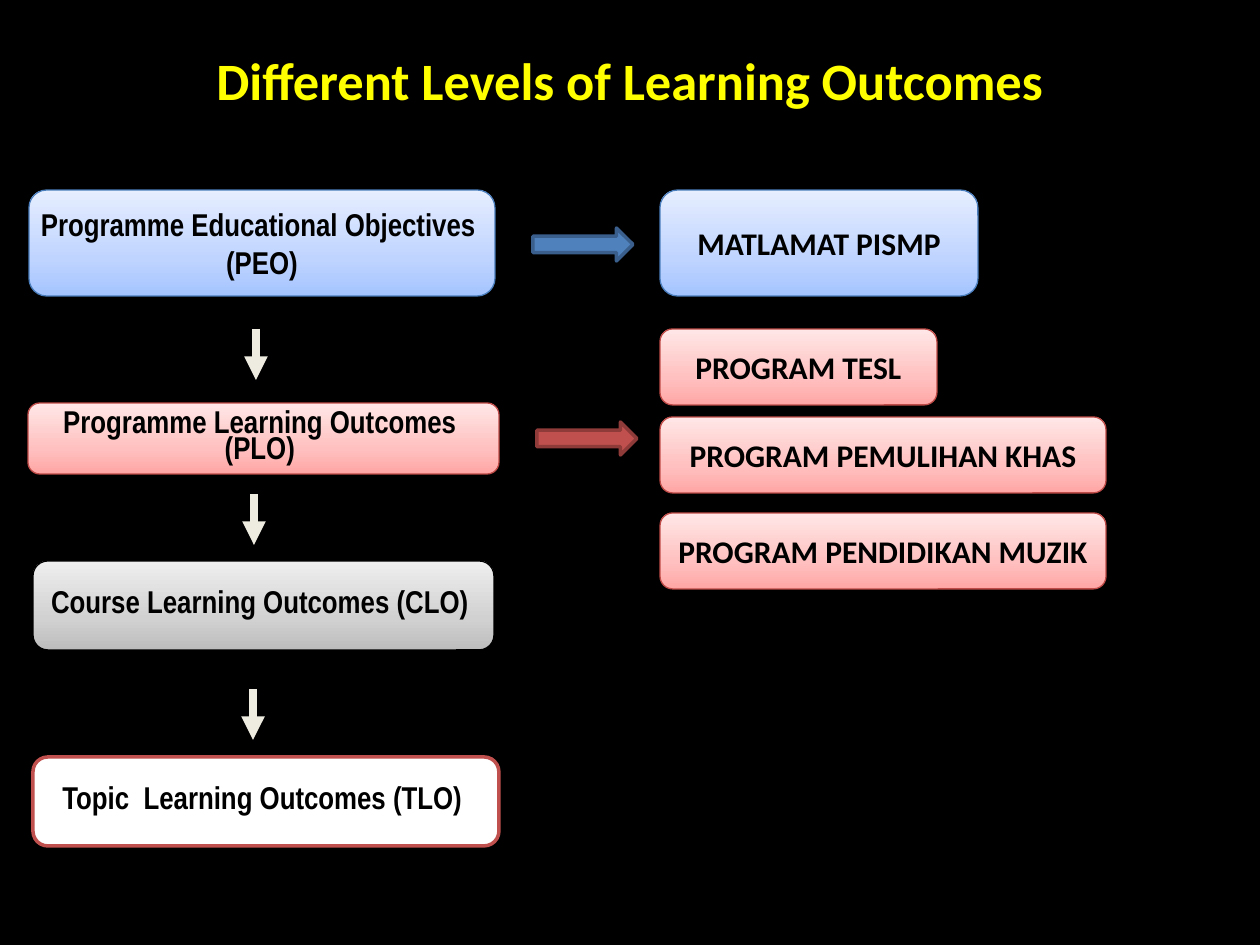
from dataclasses import dataclass

from lxml import etree
from pptx import Presentation
from pptx.dml.color import RGBColor
from pptx.enum.shapes import MSO_CONNECTOR, MSO_SHAPE
from pptx.enum.text import MSO_ANCHOR, PP_ALIGN
from pptx.oxml.ns import qn
from pptx.util import Emu, Pt

SLIDE_SIZE = (1260, 945)
PX_PER_INCH = 126


@dataclass(frozen=True)
class BoxStyle:
    fill: tuple  # one colour, or gradient colours from bottom to top
    line: str
    line_width: float = 0.75


class Theme:
    background = "000000"
    title = "FFFF00"
    text = "000000"
    step = "EEECE1"
    shadow = "000000"
    level_font = "Arial Narrow"
    font = "Calibri"
    title_size = 30
    box_size = 18
    step_width = 4.5
    stops = (0, 35, 100)
    blue = BoxStyle(("A4C4FF", "BFD4FF", "E6EEFF"), "4B7EBC")
    red = BoxStyle(("FFA6A5", "FFC0BF", "FFE7E7"), "BF4C48")
    grey = BoxStyle(("BDBDBD", "D1D1D1", "EEEEEE"), "000000")
    white = BoxStyle(("FFFFFF",), "C0504D", 2)
    blue_arrow = BoxStyle(("4F81BD",), "3A5F8C", 2)
    red_arrow = BoxStyle(("C0504D",), "8E3B39", 2)


def px(*lengths):
    return [Emu(round(length * 914400 / PX_PER_INCH)) for length in lengths]


def add_child(parent, tag, **attributes):
    child = etree.SubElement(parent, qn(tag))
    for name, value in attributes.items():
        child.set(name, str(value))
    return child


def set_gradient(fill, colours):
    fill.gradient()
    fill.gradient_angle = 90
    stop_list = fill._fill._gradFill.find(qn("a:gsLst"))
    for old_stop in list(stop_list):
        stop_list.remove(old_stop)
    for position, colour in zip(Theme.stops, colours):
        stop = add_child(stop_list, "a:gs", pos=position * 1000)
        add_child(stop, "a:srgbClr", val=colour)


def add_drop_shadow(shape):
    effects = shape._element.spPr.find(qn("a:effectLst"))
    shadow = add_child(effects, "a:outerShdw", blurRad=Pt(3.1), dist=Pt(1.6),
                       dir=90 * 60000, rotWithShape=0)
    colour = add_child(shadow, "a:srgbClr", val=Theme.shadow)
    add_child(colour, "a:alpha", val=38000)


def add_styled_shape(slide, preset, bounds, style):
    shape = slide.shapes.add_shape(preset, *px(*bounds))
    shape.line.color.rgb = RGBColor.from_string(style.line)
    shape.line.width = Pt(style.line_width)
    shape.shadow.inherit = False
    if len(style.fill) > 1:
        set_gradient(shape.fill, style.fill)
        add_drop_shadow(shape)
    else:
        shape.fill.solid()
        shape.fill.fore_color.rgb = RGBColor.from_string(style.fill[0])
    return shape


def write_lines(frame, lines, font, size, colour, spacing=None):
    for index, line in enumerate(lines):
        paragraph = frame.add_paragraph() if index else frame.paragraphs[0]
        paragraph.text = line
        paragraph.alignment = PP_ALIGN.CENTER
        paragraph.line_spacing = spacing
        paragraph.font.name = font
        paragraph.font.size = Pt(size)
        paragraph.font.bold = True
        paragraph.font.color.rgb = RGBColor.from_string(colour)


def add_box(slide, bounds, style, lines, font=Theme.font, spacing=None, wrap=True):
    box = add_styled_shape(slide, MSO_SHAPE.ROUNDED_RECTANGLE, bounds, style)
    frame = box.text_frame
    frame.word_wrap = wrap
    frame.vertical_anchor = MSO_ANCHOR.MIDDLE
    write_lines(frame, lines, font, Theme.box_size, Theme.text, spacing)


def add_step_arrow(slide, x, top, length=51):
    arrow = slide.shapes.add_connector(MSO_CONNECTOR.STRAIGHT, *px(x, top, x, top + length))
    arrow.line.color.rgb = RGBColor.from_string(Theme.step)
    arrow.line.width = Pt(Theme.step_width)
    add_child(arrow.line._get_or_add_ln(), "a:tailEnd", type="triangle")
    add_child(arrow._element.spPr, "a:effectLst")


def add_title(slide, text):
    title = slide.shapes.add_textbox(*px(0, 39, SLIDE_SIZE[0], 78))
    title.text_frame.word_wrap = True
    title.text_frame.vertical_anchor = MSO_ANCHOR.BOTTOM
    write_lines(title.text_frame, [text], Theme.font, Theme.title_size, Theme.title)


def main():
    presentation = Presentation()
    presentation.slide_width, presentation.slide_height = px(*SLIDE_SIZE)
    slide = presentation.slides.add_slide(presentation.slide_layouts[6])
    slide.background.fill.solid()
    slide.background.fill.fore_color.rgb = RGBColor.from_string(Theme.background)

    levels = [
        ((29, 190, 466, 106), Theme.blue, ["Programme Educational Objectives ", "(PEO)"], None),
        ((28, 403, 471, 71), Theme.red, ["Programme Learning Outcomes ", "(PLO) "], 0.7),
        ((33, 561, 461, 89), Theme.grey, ["Course Learning Outcomes (CLO) "], 0.7),
        ((33, 757, 466, 89), Theme.white, ["Topic  Learning Outcomes (TLO) "], 0.7),
    ]
    for bounds, style, lines, spacing in levels:
        add_box(slide, bounds, style, lines, Theme.level_font, spacing, wrap=False)

    for x, top in [(256, 329), (254, 494), (253, 689)]:
        add_step_arrow(slide, x, top)

    add_title(slide, "Different Levels of Learning Outcomes")

    for left, top, style in [(533, 228, Theme.blue_arrow), (537, 422, Theme.red_arrow)]:
        add_styled_shape(slide, MSO_SHAPE.RIGHT_ARROW, (left, top, 100, 33), style)

    examples_left = 660
    examples = [
        (190, 318, 106, Theme.blue, "MATLAMAT PISMP"),
        (329, 277, 76, Theme.red, "PROGRAM TESL"),
        (417, 446, 76, Theme.red, "PROGRAM PEMULIHAN KHAS"),
        (513, 446, 76, Theme.red, "PROGRAM PENDIDIKAN MUZIK"),
    ]
    for top, width, height, style, name in examples:
        add_box(slide, (examples_left, top, width, height), style, [name])

    presentation.save("out.pptx")


if __name__ == "__main__":
    main()
